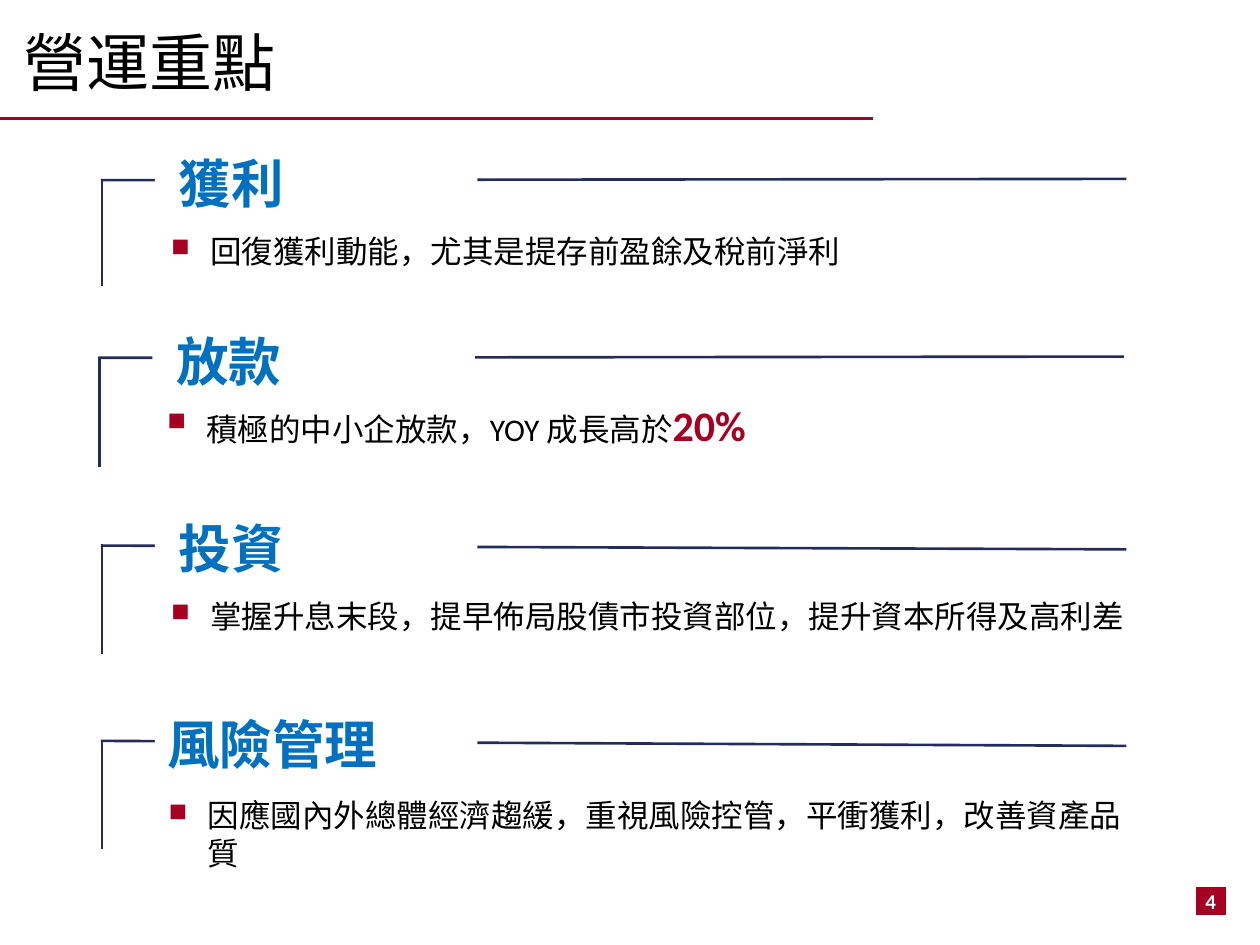
"""Build the operating priorities slide with four bracketed sections."""
from lxml import etree
from pptx import Presentation
from pptx.dml.color import RGBColor
from pptx.enum.shapes import MSO_CONNECTOR, MSO_SHAPE
from pptx.enum.text import MSO_ANCHOR, PP_ALIGN
from pptx.oxml.ns import qn
from pptx.util import Inches, Pt

COLORS = {
    "red": "A50021", "navy": "232C5D", "blue": "0070C0",
    "black": "000000", "white": "FFFFFF",
}
TITLE = "營運重點"
PAGE_NUMBER = "4"
TITLE_FORMAT = {"size": 36, "color": "black"}
HEADING_FORMAT = {"size": 30, "color": "blue", "bold": True}
BODY_FORMAT = {"size": 18, "color": "black"}
ACCENT_FORMAT = {"size": 24, "color": "red", "bold": True}
PAGE_FORMAT = {"size": 12, "color": "white", "bold": True}

SECTIONS = [
    {"heading": "獲利", "indent": 0.19, "left": 1.23, "top": 1.15,
     "body": [("回復獲利動能，尤其是提存前盈餘及稅前淨利", BODY_FORMAT)],
     "body_box": (1.26, 1.79, 7.39, 0.4), "rule_drop": -0.01, "bracket_height": 0.85},
    {"heading": "放款", "indent": 0.19, "left": 1.21, "top": 2.56,
     "body": [("積極的中小企放款，YOY 成長高於", BODY_FORMAT), ("20%", ACCENT_FORMAT)],
     "body_box": (1.23, 3.12, 7.29, 0.5), "rule_drop": -0.01, "bracket_height": 0.88},
    {"heading": "投資", "indent": 0.19, "left": 1.23, "top": 4.05,
     "body": [("掌握升息末段，提早佈局股債市投資部位，提升資本所得及高利差", BODY_FORMAT)],
     "body_box": (1.26, 4.69, 7.78, 0.4), "rule_drop": 0.03, "bracket_height": 0.87},
    {"heading": "風險管理", "indent": 0.1, "left": 1.23, "top": 5.6,
     "body": [("因應國內外總體經濟趨緩，重視風險控管，平衝獲利，改善資產品質", BODY_FORMAT)],
     "body_box": (1.24, 6.27, 7.79, 0.71), "rule_drop": 0.04, "bracket_height": 0.87},
]


def rgb(name):
    return RGBColor.from_string(COLORS[name])


def add_run(paragraph, text, style):
    run = paragraph.add_run()
    run.text = text
    run.font.color.rgb = rgb(style["color"])
    values = {"name": "Calibri", "size": Pt(style["size"]), "bold": style.get("bold", False)}
    for attribute, value in values.items():
        setattr(run.font, attribute, value)


def set_frame(frame, left=0.1, top=0.05, right=0.1, bottom=0.05, anchor=MSO_ANCHOR.TOP):
    values = {
        "margin_left": Inches(left), "margin_top": Inches(top),
        "margin_right": Inches(right), "margin_bottom": Inches(bottom),
        "vertical_anchor": anchor, "word_wrap": True,
    }
    for attribute, value in values.items():
        setattr(frame, attribute, value)


def add_text(slide, box, runs, **frame_format):
    frame = slide.shapes.add_textbox(*map(Inches, box)).text_frame
    set_frame(frame, **frame_format)
    for text, style in runs:
        add_run(frame.paragraphs[0], text, style)
    return frame.paragraphs[0]


def add_block(slide, box, fill, text, style, align, **frame_format):
    block = slide.shapes.add_shape(MSO_SHAPE.RECTANGLE, *map(Inches, box))
    block.shadow.inherit = False
    block.fill.solid()
    block.fill.fore_color.rgb = rgb(fill)
    set_frame(block.text_frame, **frame_format)
    paragraph = block.text_frame.paragraphs[0]
    paragraph.alignment = align
    add_run(paragraph, text, style)
    return block


def add_line(slide, start, end, color, width):
    line = slide.shapes.add_connector(MSO_CONNECTOR.STRAIGHT, *map(Inches, start + end))
    line.line.color.rgb = rgb(color)
    line.line.width = Pt(width)
    etree.SubElement(line._element.spPr, qn("a:effectLst"))


def add_bullet(paragraph):
    properties = paragraph._p.get_or_add_pPr()
    properties.set("marL", str(Inches(0.31)))
    properties.set("indent", str(-Inches(0.31)))
    color = etree.SubElement(properties, qn("a:buClr"))
    etree.SubElement(color, qn("a:srgbClr"), val=COLORS["red"])
    etree.SubElement(properties, qn("a:buSzPct"), val="80000")
    etree.SubElement(properties, qn("a:buChar"), char="■")


def add_section(slide, section):
    left, top = section["left"], section["top"]
    add_bullet(add_text(slide, section["body_box"], section["body"]))
    bracket_x, bracket_y = left - 0.42, top + 0.27
    add_line(slide, (bracket_x, bracket_y),
             (bracket_x, bracket_y + section["bracket_height"]), "navy", 1.5)
    rule_x, rule_y = left - 0.43, top + 0.28
    add_line(slide, (rule_x, rule_y),
             (rule_x + 8.14, rule_y + section["rule_drop"]), "navy", 1.5)
    heading = add_block(slide, (left, top, 2.56, 0.61), "white", section["heading"],
                        HEADING_FORMAT, PP_ALIGN.LEFT, left=section["indent"])
    heading.line.fill.background()


def main():
    presentation = Presentation()
    presentation.slide_width, presentation.slide_height = Inches(10), Inches(7.5)
    slide = presentation.slides.add_slide(presentation.slide_layouts[6])

    add_line(slide, (0, 0.94), (6.93, 0.94), "red", 2)
    page = add_block(slide, (9.48, 7.03, 0.26, 0.24), "red", PAGE_NUMBER, PAGE_FORMAT,
                     PP_ALIGN.CENTER, left=0, top=0, right=0, bottom=0,
                     anchor=MSO_ANCHOR.MIDDLE)
    page.line.color.rgb = rgb("white")
    page.line.width = Pt(1.5)
    add_text(slide, (0.19, 0.19, 5.06, 0.72), [(TITLE, TITLE_FORMAT)],
             left=0, top=0, right=0.59, bottom=0)
    for section in SECTIONS:
        add_section(slide, section)

    presentation.save("out.pptx")


if __name__ == "__main__":
    main()
